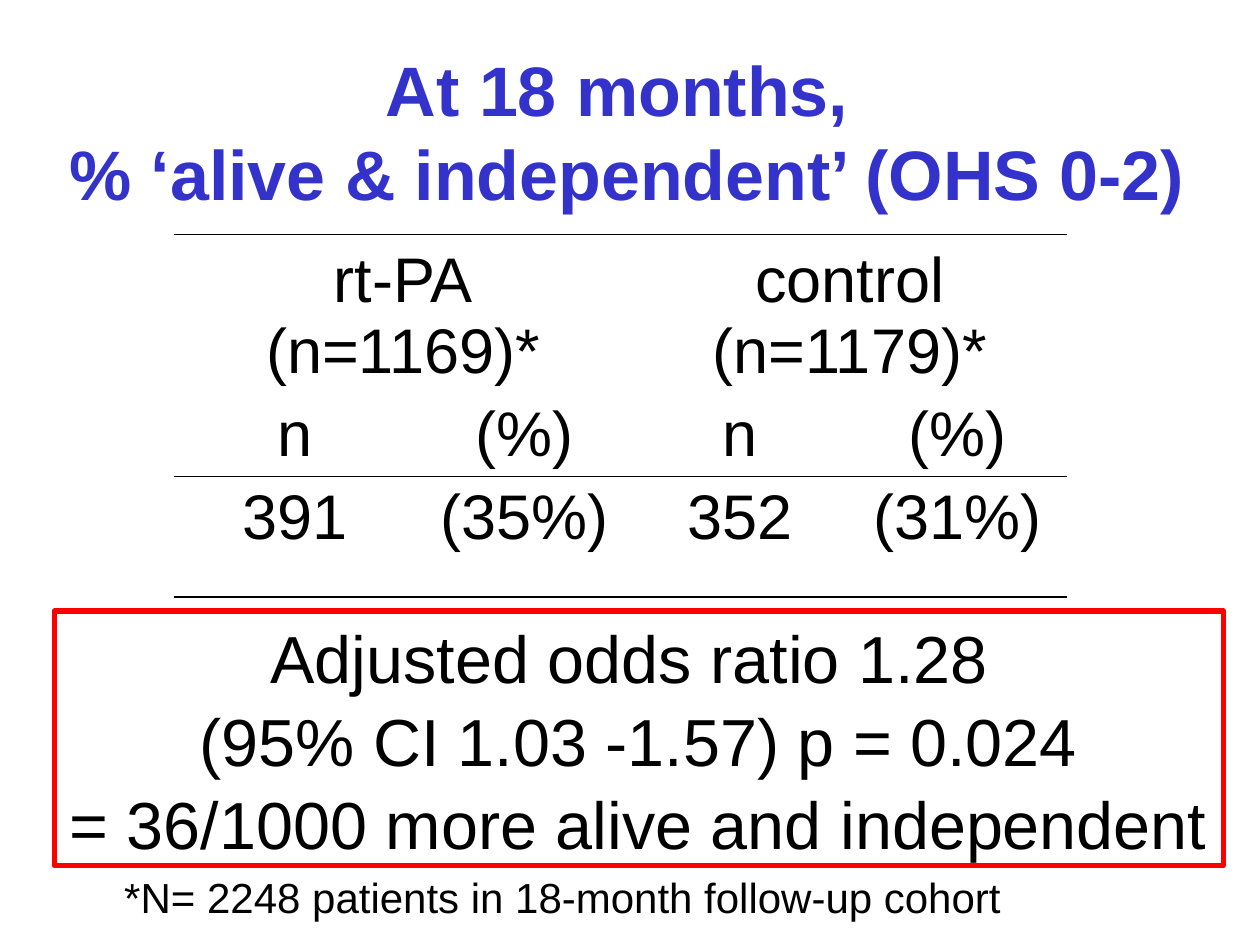
import pptx
import pptx.util
import pptx.dml.color
import pptx.enum.shapes
import pptx.enum.text
import pptx.oxml
from pptx.util import Inches

COLORS = {"title": "3333CC", "text": "000000", "rule": "000000", "frame": "FF0000"}
FONT = "Arial"
ANCHOR = pptx.enum.text.MSO_ANCHOR
SIDES = ("lnL", "lnR", "lnT", "lnB")


def color(name):
    return pptx.dml.color.RGBColor.from_string(COLORS[name])


def set_border(cell, side, points=0):
    """Rule one side of a cell, named as in SIDES; zero points hides it."""
    fill = f'<a:solidFill><a:srgbClr val="{COLORS["rule"]}"/></a:solidFill>' if points else "<a:noFill/>"
    namespace = "http://schemas.openxmlformats.org/drawingml/2006/main"
    border = pptx.oxml.parse_xml(
        f'<a:{side} xmlns:a="{namespace}" w="{pptx.util.Pt(points)}">{fill}</a:{side}>')
    cell._tc.get_or_add_tcPr().insert(SIDES.index(side), border)


class SlideBuilder:
    def __init__(self, presentation):
        self.slide = presentation.slides.add_slide(presentation.slide_layouts[5])

    def set_text(self, text_frame, text, size, color_name="text", bold=False):
        text_frame.text = text
        for paragraph in text_frame.paragraphs:
            paragraph.alignment = pptx.enum.text.PP_ALIGN.CENTER
            for run in paragraph.runs:
                run.font.name = FONT
                run.font.size = pptx.util.Pt(size)
                run.font.bold = bold
                run.font.color.rgb = color(color_name)

    def title(self, text, left, top, width, height):
        title = self.slide.shapes.title
        title.left, title.top = Inches(left), Inches(top)
        title.width, title.height = Inches(width), Inches(height)
        title.text_frame.vertical_anchor = ANCHOR.MIDDLE
        self.set_text(title.text_frame, text, 40, "title", bold=True)

    def table(self, rows, left, top, column_widths, row_heights):
        """Add a ruled table; in the first row each entry spans two columns."""
        frame = self.slide.shapes.add_table(
            len(rows), len(column_widths), Inches(left), Inches(top),
            Inches(sum(column_widths)), Inches(sum(row_heights)))
        table = frame.table
        table.first_row = table.horz_banding = False
        for column, width in zip(table.columns, column_widths):
            column.width = Inches(width)
        for row, height in zip(table.rows, row_heights):
            row.height = Inches(height)
        for column in (0, 2):
            table.cell(0, column).merge(table.cell(0, column + 1))

        last = len(rows) - 1
        for row_index, texts in enumerate(rows):
            for column_index, text in enumerate(texts):
                cell = table.cell(row_index, column_index)
                cell.fill.background()
                cell.vertical_anchor = ANCHOR.TOP if row_index == last else ANCHOR.BOTTOM
                rules = {"lnT": row_index in (0, last), "lnB": row_index >= last - 1}
                for side in SIDES:
                    set_border(cell, side, 1 if rules.get(side) else 0)
                if text:
                    self.set_text(cell.text_frame, text, 36)

    def framed_text(self, text, left, top, width, height):
        shape = self.slide.shapes.add_shape(
            pptx.enum.shapes.MSO_SHAPE.RECTANGLE,
            Inches(left), Inches(top), Inches(width), Inches(height))
        shape.shadow.inherit = False
        shape.fill.background()
        shape.line.color.rgb = color("frame")
        shape.line.width = pptx.util.Pt(3)
        shape.text_frame.word_wrap = True
        shape.text_frame.vertical_anchor = ANCHOR.MIDDLE
        self.set_text(shape.text_frame, text, 38)
        for paragraph in shape.text_frame.paragraphs:
            paragraph.line_spacing = 1.04

    def note(self, text, left, top, width, height):
        box = self.slide.shapes.add_textbox(
            Inches(left), Inches(top), Inches(width), Inches(height))
        box.text_frame.word_wrap = False
        self.set_text(box.text_frame, text, 24)


def main():
    presentation = pptx.Presentation()
    presentation.slide_width, presentation.slide_height = Inches(10), Inches(7.5)
    builder = SlideBuilder(presentation)
    builder.title("At 18 months, \v% ‘alive & independent’ (OHS 0-2)", 0.2, 0.21, 9.55, 1.65)
    builder.table(
        [["rt-PA\n(n=1169)*", "", "control\n(n=1179)*", ""],
         ["n", "(%)", "n", "(%)"],
         ["391", "(35%)", "352", "(31%)"]],
        1.38, 1.86, [1.93, 1.71, 1.71, 1.74], [1.26, 0.65, 0.96])
    builder.framed_text(
        "Adjusted odds ratio 1.28 \n(95% CI 1.03 -1.57) p = 0.024\n"
        "= 36/1000 more alive and independent", 0.43, 4.85, 9.28, 2.02)
    builder.note("*N= 2248 patients in 18-month follow-up cohort", 0.85, 6.87, 7.23, 0.5)
    presentation.save("out.pptx")


if __name__ == "__main__":
    main()
